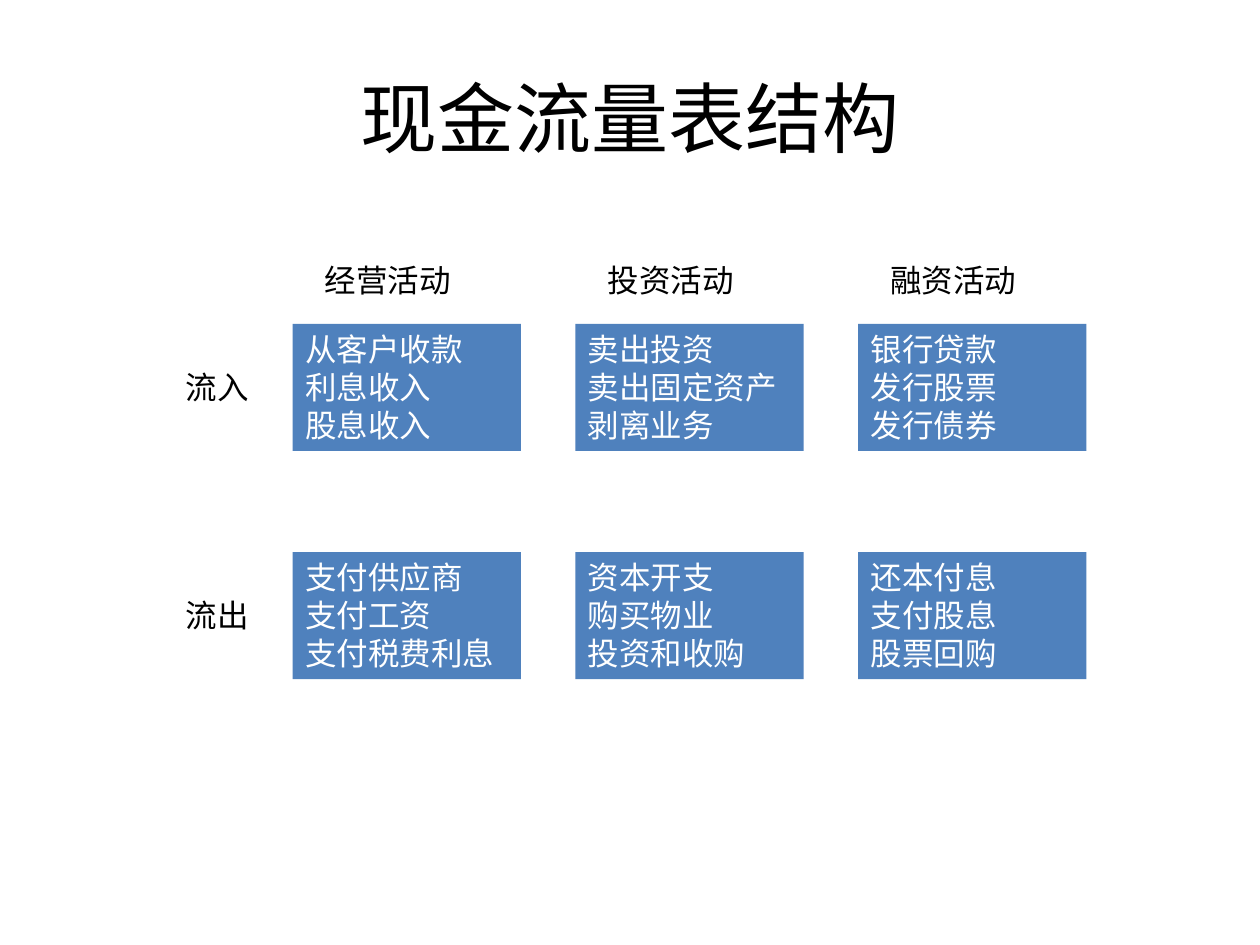
from pptx import Presentation
from pptx.dml.color import RGBColor
from pptx.enum.shapes import MSO_SHAPE
from pptx.enum.text import MSO_ANCHOR, MSO_AUTO_SIZE, PP_ALIGN
from pptx.util import Cm, Pt

COLORS = {"text": "000000", "fill": "4F81BD", "box_text": "FFFFFF"}
FONT = "Calibri"

ACTIVITIES = ["经营活动", "投资活动", "融资活动"]
FLOWS = {
    "流入": [
        ["从客户收款", "利息收入", "股息收入"],
        ["卖出投资", "卖出固定资产", "剥离业务"],
        ["银行贷款", "发行股票", "发行债券"],
    ],
    "流出": [
        ["支付供应商", "支付工资", "支付税费利息"],
        ["资本开支", "购买物业", "投资和收购"],
        ["还本付息", "支付股息", "股票回购"],
    ],
}

# Grid in centimetres
LEFT, TOP = 5.9, 6.53
COLUMN_STEP, ROW_STEP = 5.7, 4.6
BOX_WIDTH, BOX_HEIGHT = 4.6, 2.56
LABEL_HEIGHT = 1.02

deck = Presentation()
deck.slide_width, deck.slide_height = Cm(25.4), Cm(19.05)
page = deck.slides.add_slide(deck.slide_layouts[6])


def add_text(lines, left, top, width, height, size=18, color="text",
             fill=None, align=PP_ALIGN.LEFT, anchor=MSO_ANCHOR.TOP):
    area = Cm(left), Cm(top), Cm(width), Cm(height)
    if fill:
        box = page.shapes.add_shape(MSO_SHAPE.RECTANGLE, *area)
        box.shadow.inherit = False
        box.fill.solid()
        box.fill.fore_color.rgb = RGBColor.from_string(COLORS[fill])
        box.line.fill.background()
    else:
        box = page.shapes.add_textbox(*area)
    frame = box.text_frame
    frame.word_wrap = True
    frame.auto_size = MSO_AUTO_SIZE.NONE
    frame.vertical_anchor = anchor
    frame.text = "\n".join(lines)
    for para in frame.paragraphs:
        para.alignment = align
        for span in para.runs:
            span.font.name = FONT
            span.font.size = Pt(size)
            span.font.color.rgb = RGBColor.from_string(COLORS[color])


# Title
add_text(["现金流量表结构"], 1.27, 0.76, 22.86, 3.18, size=44,
         align=PP_ALIGN.CENTER, anchor=MSO_ANCHOR.MIDDLE)

# Column headings
for column, activity in enumerate(ACTIVITIES):
    add_text([activity], LEFT + 0.4 + column * COLUMN_STEP, 5.13, 3.81, LABEL_HEIGHT)

# Row labels and cash flow boxes
for row, (flow, groups) in enumerate(FLOWS.items()):
    top = TOP + row * ROW_STEP
    add_text([flow], 3.5, top + (BOX_HEIGHT - LABEL_HEIGHT) / 2, 2, LABEL_HEIGHT)
    for column, items in enumerate(groups):
        add_text(items, LEFT + column * COLUMN_STEP, top, BOX_WIDTH, BOX_HEIGHT,
                 color="box_text", fill="fill")

deck.save("out.pptx")
